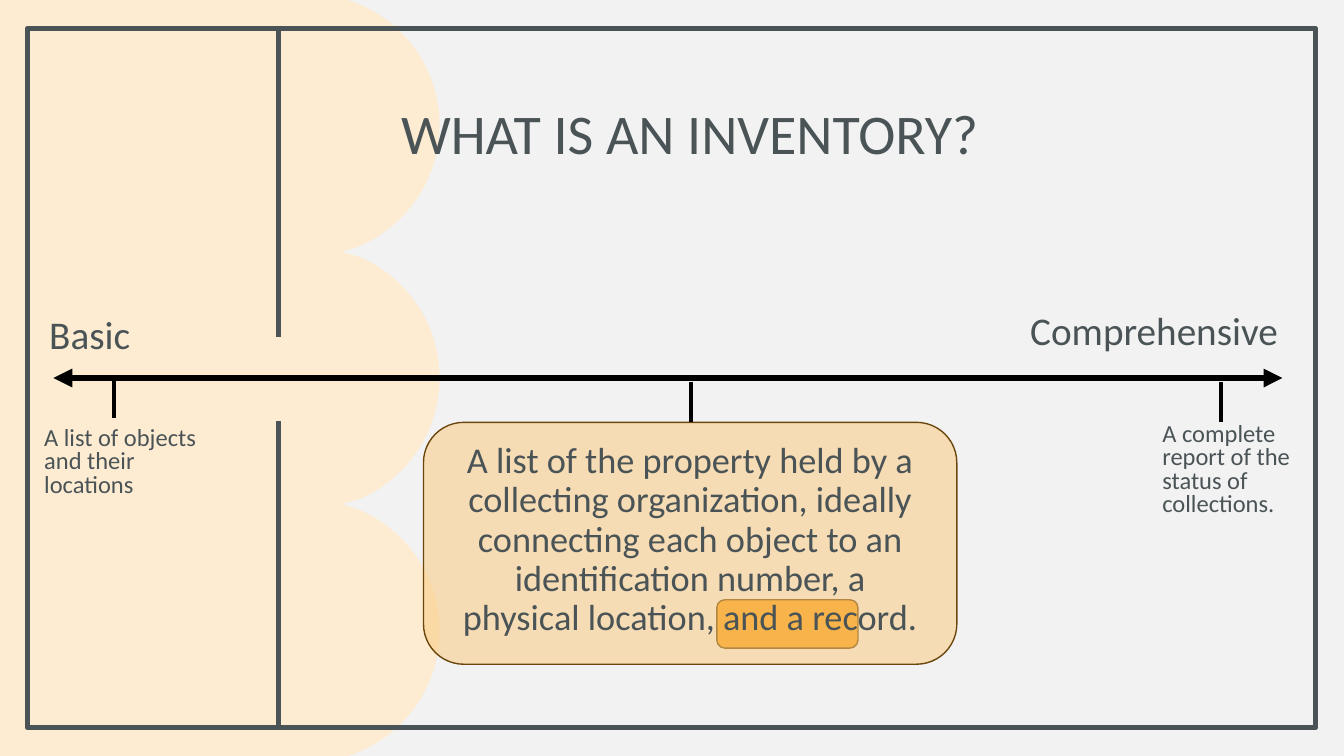
import lxml.etree
import pptx
import pptx.dml.color
import pptx.enum.shapes
import pptx.enum.text
import pptx.oxml.ns
import pptx.util
from pptx.util import Inches

COLORS = {
    "page": "F2F2F2",
    "scallop": "FDECD2",
    "slate": "4A5356",
    "highlight": "F6A21D",
    "card": "FAC777",
    "card_line": "6C470D",
    "black": "000000",
}
SHAPES = pptx.enum.shapes.MSO_SHAPE
ALIGN = pptx.enum.text.PP_ALIGN
ANCHOR = pptx.enum.text.MSO_ANCHOR
qn = pptx.oxml.ns.qn


def rgb(name):
    return pptx.dml.color.RGBColor.from_string(COLORS[name])


def add_text(text, left, top, width, height, size=17.5, spacing=1.0,
             align=ALIGN.LEFT, anchor=ANCHOR.TOP, side_inset=0.1, end_inset=0.05):
    box = slide.shapes.add_textbox(Inches(left), Inches(top), Inches(width), Inches(height))
    frame = box.text_frame
    frame.word_wrap = True
    frame.vertical_anchor = anchor
    frame.margin_left = frame.margin_right = Inches(side_inset)
    frame.margin_top = frame.margin_bottom = Inches(end_inset)
    para = frame.paragraphs[0]
    para.alignment = align
    para.line_spacing = spacing
    span = para.add_run()
    span.text = text
    span.font.name = "Calibri"
    span.font.size = pptx.util.Pt(size)
    span.font.color.rgb = rgb("slate")


deck = pptx.Presentation()
deck.slide_width, deck.slide_height = Inches(13.33), Inches(7.5)
slide = deck.slides.add_slide(deck.slide_layouts[6])
slide.background.fill.solid()
slide.background.fill.fore_color.rgb = rgb("page")

# Scalloped panel in hundredths of an inch: one point is a line, three are a curve
segments = [
    [(345, 0)],
    [(398, 17), (436, 66), (436, 124)],
    [(436, 178), (403, 224), (357, 244)],
    [(339, 250)],
    [(357, 255)],
    [(403, 275), (436, 321), (436, 375)],
    [(436, 429), (403, 475), (357, 495)],
    [(339, 500)],
    [(357, 506)],
    [(403, 526), (436, 572), (436, 626)],
    [(436, 684), (398, 733), (345, 750)],
    [(0, 750)],
]
builder = slide.shapes.build_freeform(0, 0, scale=Inches(0.01))
builder.add_line_segments([points[-1] for points in segments], close=True)
panel = builder.convert_to_shape()
panel.shadow.inherit = False
panel.fill.solid()
panel.fill.fore_color.rgb = rgb("scallop")
panel.line.fill.background()
for step, points in zip(list(panel._element.iter(qn("a:lnTo"))), segments):
    if len(points) == 3:
        step.tag = qn("a:cubicBezTo")
        for place, (x, y) in enumerate(points[:2]):
            step.insert(place, lxml.etree.Element(qn("a:pt"), x=str(x), y=str(y)))

# Frame, highlight and definition card
for kind, left, top, width, height, fill, line, weight in [
    (SHAPES.RECTANGLE, 0.27, 0.28, 12.78, 6.94, None, "slate", 3.5),
    (SHAPES.ROUNDED_RECTANGLE, 7.11, 5.95, 1.4, 0.48, "highlight", "card_line", 1),
    (SHAPES.ROUNDED_RECTANGLE, 4.2, 4.19, 5.29, 2.4, "card", "card_line", 1),
]:
    shape = slide.shapes.add_shape(kind, Inches(left), Inches(top), Inches(width), Inches(height))
    shape.shadow.inherit = False
    shape.line.color.rgb = rgb(line)
    shape.line.width = pptx.util.Pt(weight)
    if fill:
        shape.fill.solid()
        shape.fill.fore_color.rgb = rgb(fill)
    else:
        shape.fill.background()
    if fill == "card":
        color = shape.fill._xPr.find(qn("a:solidFill"))[0]
        lxml.etree.SubElement(color, qn("a:alpha"), val="50000")

# Divider halves, scale arrow and its ticks
for x1, y1, x2, y2, color, weight, arrows in [
    (2.76, 0.28, 2.76, 3.34, "slate", 3.5, False),
    (2.76, 4.18, 2.76, 7.24, "slate", 3.5, False),
    (0.53, 3.75, 12.72, 3.75, "black", 4.5, True),
    (1.13, 3.75, 1.13, 4.15, "black", 3, False),
    (6.85, 3.79, 6.85, 4.19, "black", 3, False),
    (12.11, 3.79, 12.11, 4.19, "black", 3, False),
]:
    connector = slide.shapes.add_connector(
        pptx.enum.shapes.MSO_CONNECTOR.STRAIGHT,
        Inches(x1), Inches(y1), Inches(x2), Inches(y2))
    connector.line.color.rgb = rgb(color)
    connector.line.width = pptx.util.Pt(weight)
    if arrows:
        for end in ("a:headEnd", "a:tailEnd"):
            lxml.etree.SubElement(connector.line._get_or_add_ln(), qn(end), type="triangle")
    lxml.etree.SubElement(connector._element.spPr, qn("a:effectLst"))

add_text("WHAT IS AN INVENTORY?", 3.41, 0.65, 6.86, 1.41, size=40, spacing=0.9,
         align=ALIGN.CENTER, anchor=ANCHOR.MIDDLE, side_inset=0.2, end_inset=0)
add_text("A list of objects and their locations", 0.34, 4.19, 1.8, 1.07, spacing=0.8)
add_text("A complete report of the status of collections.", 11.43, 4.15, 1.8, 1.07, spacing=0.8)
add_text("A list of the property held by a collecting organization, ideally connecting each "
         "object to an identification number, a physical location, and a record.",
         4.4, 4.34, 4.89, 2.1, size=25.9, spacing=0.9, align=ALIGN.CENTER)
add_text("Basic", 0.39, 3.08, 1.07, 0.54, size=28, spacing=0.9)
add_text("Comprehensive", 10.12, 2.99, 2.83, 0.7, size=28)

deck.save("out.pptx")
